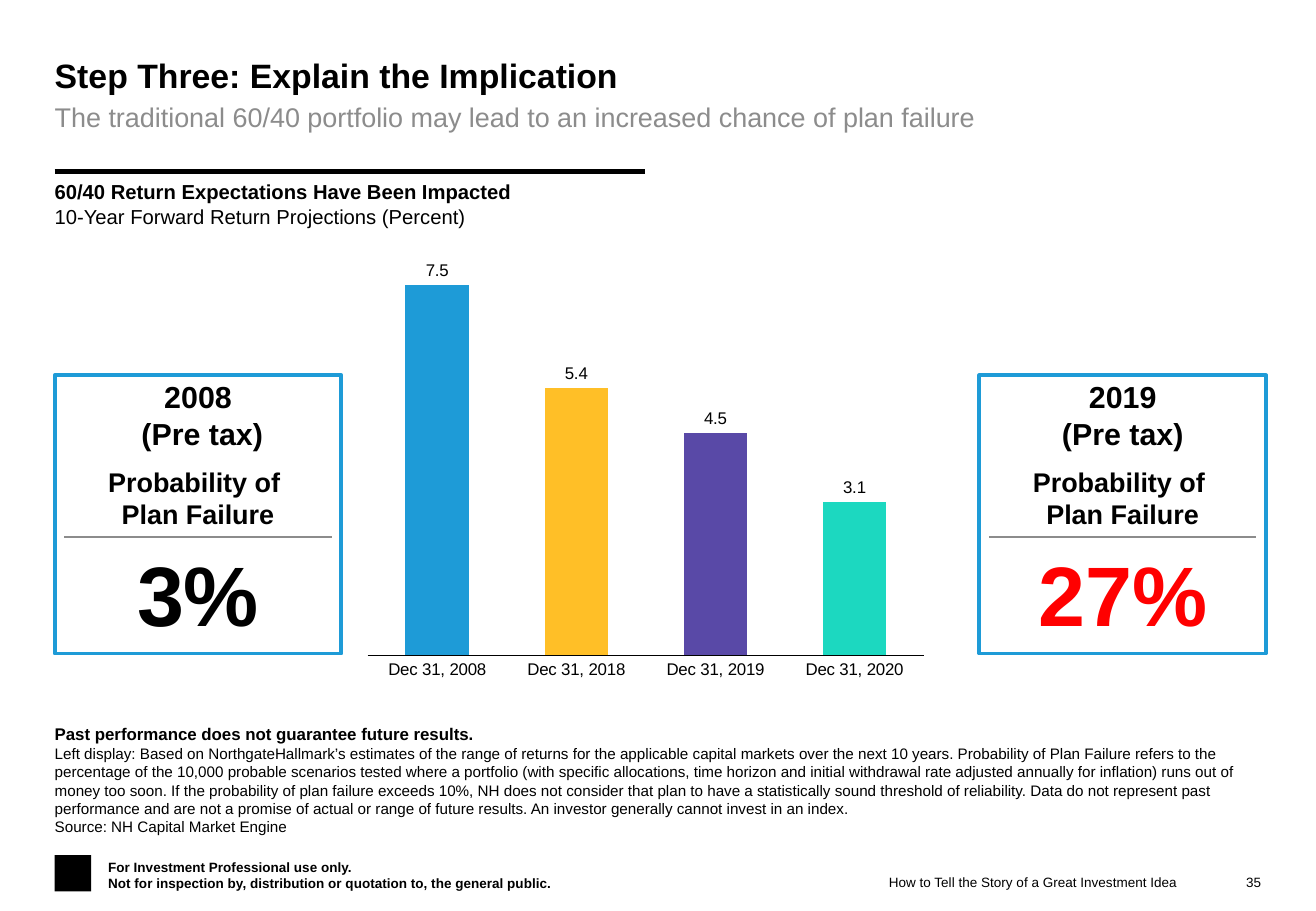
from lxml import etree
from pptx import Presentation
from pptx import util as u
from pptx.chart import data as chart_data
from pptx.dml import color
from pptx.enum import chart as ch
from pptx.enum import shapes, text
from pptx.oxml import ns

COLORS = {
    "black": "000000", "grey": "8C8C8C", "red": "FF0000", "blue": "1E9BD7",
    "yellow": "FFBF27", "purple": "5949A7", "teal": "1CD8C0",
}
LEFT, CENTER, RIGHT = text.PP_ALIGN.LEFT, text.PP_ALIGN.CENTER, text.PP_ALIGN.RIGHT
TOP, MIDDLE, BOTTOM = text.MSO_ANCHOR.TOP, text.MSO_ANCHOR.MIDDLE, text.MSO_ANCHOR.BOTTOM

DISCLOSURE = (
    "Left display: Based on NorthgateHallmark’s estimates of the range of returns for the "
    "applicable capital markets over the next 10 years. Probability of Plan Failure refers to the "
    "percentage of the 10,000 probable scenarios tested where a portfolio (with specific "
    "allocations, time horizon and initial withdrawal rate adjusted annually for inflation) runs "
    "out of money too soon. If the probability of plan failure exceeds 10%, NH does not consider "
    "that plan to have a statistically sound threshold of reliability. Data do not represent past "
    "performance and are not a promise of actual or range of future results. An investor generally "
    "cannot invest in an index."
)


def rgb(name):
    return color.RGBColor.from_string(COLORS[name])


def assign(target, values):
    for key, value in values.items():
        setattr(target, key, value)


class StorySlide:
    font = "Arial"

    def __init__(self, width, height):
        self.deck = Presentation()
        assign(self.deck, {"slide_width": u.Inches(width), "slide_height": u.Inches(height)})
        self.slide = self.deck.slides.add_slide(self.deck.slide_layouts[1])

    def style_font(self, font, size, shade="black", bold=False):
        assign(font, {"name": self.font, "size": u.Pt(size), "bold": bold})
        font.color.rgb = rgb(shade)

    def set_lines(self, frame, lines, align=LEFT, anchor=TOP, wrap=True, inset=(0, 0)):
        side, edge = map(u.Inches, inset)
        assign(frame, {
            "auto_size": text.MSO_AUTO_SIZE.NONE, "word_wrap": wrap, "vertical_anchor": anchor,
            "margin_left": side, "margin_right": side, "margin_top": edge, "margin_bottom": edge,
        })
        for index, (wording, *look) in enumerate(lines):
            paragraph = frame.add_paragraph() if index else frame.paragraphs[0]
            assign(paragraph, {"alignment": align, "space_before": u.Pt(0)})
            run = paragraph.add_run()
            run.text = wording
            self.style_font(run.font, *look)

    def placeholder(self, index, box, line):
        holder = self.slide.placeholders[index]
        assign(holder, dict(zip(("left", "top", "width", "height"), map(u.Inches, box))))
        self.set_lines(holder.text_frame, [line])
        properties = holder.text_frame.paragraphs[0]._p.get_or_add_pPr()
        for key in ("marL", "indent"):
            properties.set(key, "0")
        etree.SubElement(properties, ns.qn("a:buNone"))

    def label(self, box, lines, **layout):
        area = self.slide.shapes.add_textbox(*map(u.Inches, box))
        self.set_lines(area.text_frame, lines, **layout)

    def rectangle(self, box, fill=None, outline=None, weight=0):
        rect = self.slide.shapes.add_shape(shapes.MSO_SHAPE.RECTANGLE, *map(u.Inches, box))
        rect.shadow.inherit = False
        if fill:
            rect.fill.solid()
            rect.fill.fore_color.rgb = rgb(fill)
        else:
            rect.fill.background()
        if outline:
            rect.line.color.rgb = rgb(outline)
            rect.line.width = u.Pt(weight)
        else:
            rect.line.fill.background()

    def rule(self, left, right, y, shade, weight):
        ends = map(u.Inches, (left, y, right, y))
        rule = self.slide.shapes.add_connector(shapes.MSO_CONNECTOR.STRAIGHT, *ends)
        rule.line.color.rgb = rgb(shade)
        rule.line.width = u.Pt(weight)
        etree.SubElement(rule._element.spPr, ns.qn("a:effectLst"))

    def failure_card(self, left, heading, share, shade):
        width = 2.36
        self.rectangle((left, 3.09, width, 2.29), outline="blue", weight=2.25)
        self.rule(left + 0.08, left + width - 0.08, 4.42, "grey", 1.5)
        rows = (
            (3.06, 0.71, heading, 18, "black"),
            (3.78, 0.64, ("Probability of ", "Plan Failure"), 16, "black"),
            (4.41, 0.94, (share,), 50, shade),
        )
        for top, height, wordings, size, tone in rows:
            self.label((left, top, width, height), [(w, size, tone, True) for w in wordings],
                       align=CENTER, anchor=MIDDLE, wrap=False, inset=(0.05, 0.05))

    def column_chart(self, box, returns, maximum):
        data = chart_data.CategoryChartData()
        data.categories = [date for date, _, _ in returns]
        data.add_series("Series 1", [value for _, value, _ in returns])
        chart = self.slide.shapes.add_chart(
            ch.XL_CHART_TYPE.COLUMN_CLUSTERED, *map(u.Inches, box), data).chart
        assign(chart, {"has_legend": False, "has_title": False})
        self.style_font(chart.font, 10)

        dates, values = chart.category_axis, chart.value_axis
        for axis in (dates, values):
            assign(axis, {"major_tick_mark": ch.XL_TICK_MARK.NONE,
                          "minor_tick_mark": ch.XL_TICK_MARK.NONE,
                          "has_major_gridlines": False})
        dates.format.line.color.rgb = rgb("black")
        dates.format.line.width = u.Pt(0.75)
        assign(values, {"minimum_scale": 0, "maximum_scale": maximum,
                        "tick_label_position": ch.XL_TICK_LABEL_POSITION.NONE})
        values.format.line.fill.background()

        plot = chart.plots[0]
        assign(plot, {"gap_width": 119, "vary_by_categories": False, "has_data_labels": True})
        assign(plot.data_labels, {"show_value": True, "number_format": "0.0",
                                  "number_format_is_linked": False,
                                  "position": ch.XL_LABEL_POSITION.OUTSIDE_END})
        self.style_font(plot.data_labels.font, 10)
        for index, (_, _, shade) in enumerate(returns):
            fill = plot.series[0].points[index].format.fill
            fill.solid()
            fill.fore_color.rgb = rgb(shade)

        area = chart._chartSpace.chart.plotArea
        for old in area.findall(ns.qn("c:layout")):
            area.remove(old)
        layout = etree.Element(ns.qn("c:layout"))
        manual = etree.SubElement(layout, ns.qn("c:manualLayout"))
        settings = {"layoutTarget": "inner", "xMode": "edge", "yMode": "edge",
                    "x": "0", "y": "0", "w": "1", "h": "0.93"}
        for tag, value in settings.items():
            etree.SubElement(manual, ns.qn(f"c:{tag}")).set("val", value)
        area.insert(0, layout)


def main():
    story = StorySlide(10.83, 7.5)
    margin = 0.45

    story.placeholder(0, (margin, 0.45, 9.93, 0.34),
                      ("Step Three: Explain the Implication", 20, "black", True))
    story.placeholder(1, (margin, 0.83, 9.93, 0.77), (
        "The traditional 60/40 portfolio may lead to an increased chance of plan failure",
        16, "grey"))

    story.rule(margin, 5.31, 1.41, "black", 3)
    story.label((margin, 1.43, 4.86, 0.54), [
        ("60/40 Return Expectations Have Been Impacted", 12, "black", True),
        ("10-Year Forward Return Projections (Percent)", 12),
    ], inset=(0, 0.05))

    story.column_chart((3.02, 2.14, 4.59, 3.5), [
        ("Dec 31, 2008", 7.5, "blue"),
        ("Dec 31, 2018", 5.4, "yellow"),
        ("Dec 31, 2019", 4.5, "purple"),
        ("Dec 31, 2020", 3.1, "teal"),
    ], maximum=8)
    story.failure_card(margin, ("2008", " (Pre tax)"), "3%", "black")
    story.failure_card(8.06, ("2019", "(Pre tax)"), "27%", "red")

    story.label((margin, 5.95, 9.98, 0.93), [
        ("Past performance does not guarantee future results.", 10, "black", True),
        (DISCLOSURE, 9),
        ("Source: NH Capital Market Engine", 9),
    ], anchor=BOTTOM)

    story.rectangle((margin, 7.04, 0.3, 0.3), fill="black")
    story.label((0.89, 7.07, 4.11, 0.27), [
        ("For Investment Professional use only.", 8, "black", True),
        ("Not for inspection by, distribution or quotation to, the general public.",
         8, "black", True),
    ], anchor=BOTTOM)
    story.label((6.91, 7.19, 2.78, 0.15),
                [("How to Tell the Story of a Great Investment Idea", 8)],
                align=RIGHT, anchor=MIDDLE)
    story.label((10.06, 7.19, 0.32, 0.15), [("35", 8)], align=RIGHT, anchor=MIDDLE)

    story.deck.save("out.pptx")


if __name__ == "__main__":
    main()
